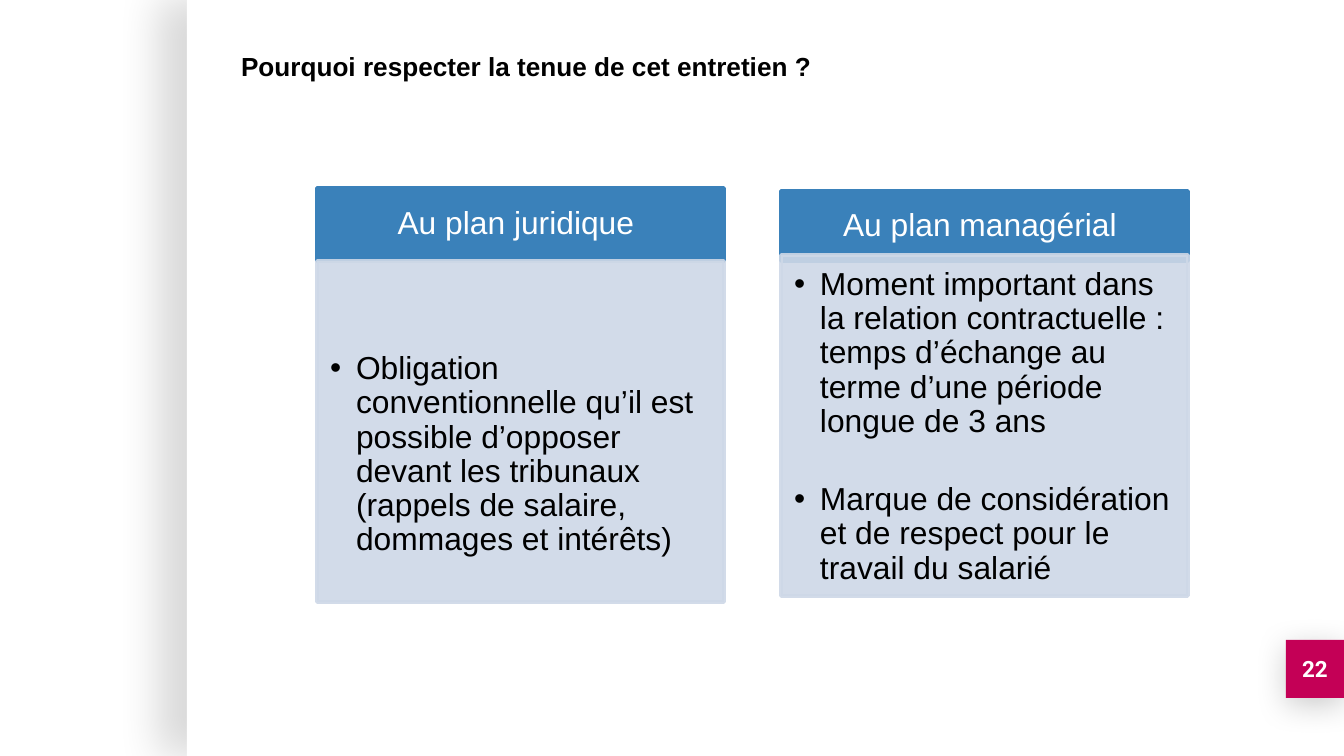
from lxml import etree
from pptx import Presentation
from pptx.dml.color import RGBColor
from pptx.enum.shapes import MSO_SHAPE
from pptx.enum.text import MSO_ANCHOR, MSO_AUTO_SIZE, PP_ALIGN
from pptx.oxml.ns import qn
from pptx.util import Emu, Pt

RECTANGLE = MSO_SHAPE.RECTANGLE
TOP, MIDDLE = MSO_ANCHOR.TOP, MSO_ANCHOR.MIDDLE
LEFT, CENTER = PP_ALIGN.LEFT, PP_ALIGN.CENTER
NO_AUTOFIT = MSO_AUTO_SIZE.NONE

EMU_PER_PX = 914400 / 134.4
COMPARISON_LAYOUT = 4
SLIDE_WIDTH, SLIDE_HEIGHT = 1344, 756
COLUMN_WIDTH, BODY_HEIGHT = 407, 341
BULLET_INDENT = 26
BLUE, PALE_BLUE, PINK = "3A81BA", "CED8E7", "C40056"
WHITE, BLACK = "FFFFFF", "000000"

COLUMNS = [
    {"left": 317, "heading_top": 188, "heading_height": 73, "body_top": 261,
     "inset_top": 91, "heading": "Au plan juridique ",
     "points": ["Obligation conventionnelle qu’il est possible d’opposer devant "
                "les tribunaux (rappels de salaire, dommages et intérêts)"]},
    {"left": 781, "heading_top": 191, "heading_height": 70, "body_top": 255,
     "inset_top": 13, "heading": "Au plan managérial ",
     "points": ["Moment important dans la relation contractuelle : temps "
                "d’échange au terme d’une période longue de 3 ans",
                "Marque de considération et de respect pour le travail du salarié"]},
]


def px(length):
    return Emu(round(length * EMU_PER_PX))


def color(value):
    return RGBColor.from_string(value)


def place(shape, left, top, width, height):
    shape.left, shape.top = px(left), px(top)
    shape.width, shape.height = px(width), px(height)


def paint(shape, fill, opacity=100):
    shape.fill.solid()
    shape.fill.fore_color.rgb = color(fill)
    shape.line.color.rgb = color(fill)
    shape.line.width = Pt(2)
    if opacity < 100:
        for tint in shape._element.spPr.iter(qn("a:srgbClr")):
            etree.SubElement(tint, qn("a:alpha"), val=str(opacity * 1000))


def add_bullet(paragraph):
    properties = paragraph._p.get_or_add_pPr()
    properties.set("marL", str(px(BULLET_INDENT)))
    properties.set("indent", str(-px(BULLET_INDENT)))
    bullet_color = etree.SubElement(properties, qn("a:buClr"))
    etree.SubElement(bullet_color, qn("a:srgbClr"), val=BLACK)
    etree.SubElement(properties, qn("a:buFont"), typeface="Arial")
    etree.SubElement(properties, qn("a:buChar"), char="•")


def write(shape, texts, size=17, font="Arial", ink=BLACK, bold=False, align=LEFT,
          anchor=TOP, insets=(13, 7, 13, 7), spacing=1.0, gap=0, bullets=False):
    frame = shape.text_frame
    frame.word_wrap = True
    frame.auto_size = NO_AUTOFIT
    frame.vertical_anchor = anchor
    (frame.margin_left, frame.margin_top,
     frame.margin_right, frame.margin_bottom) = map(px, insets)
    for index, text in enumerate(texts):
        paragraph = frame.add_paragraph() if index else frame.paragraphs[0]
        if bullets:
            add_bullet(paragraph)
        paragraph.alignment = align
        paragraph.line_spacing = spacing
        paragraph.space_before = Pt(gap if index else 0)
        run = paragraph.add_run()
        run.text = text
        run.font.name = font
        run.font.size = Pt(size)
        run.font.bold = bold
        run.font.color.rgb = color(ink)


def add_shadowed_block(slide, bounds, fill, opacity, blur, distance, direction):
    block = slide.shapes.add_shape(RECTANGLE, 0, 0, 0, 0)
    place(block, *bounds)
    block.fill.solid()
    block.fill.fore_color.rgb = color(fill)
    block.line.fill.background()
    block.shadow.inherit = False
    effects = block._element.spPr.find(qn("a:effectLst"))
    shadow = etree.SubElement(
        effects, qn("a:outerShdw"), blurRad=str(Pt(blur)), dist=str(Pt(distance)),
        dir=str(direction * 60000), algn="ctr", rotWithShape="0")
    tint = etree.SubElement(shadow, qn("a:srgbClr"), val=BLACK)
    etree.SubElement(tint, qn("a:alpha"), val=str(opacity * 1000))
    return block


def fill_column(heading, body, column):
    place(heading, column["left"], column["heading_top"],
          COLUMN_WIDTH, column["heading_height"])
    paint(heading, BLUE)
    write(heading, [column["heading"]], ink=WHITE, align=CENTER, anchor=MIDDLE,
          insets=(17, 11, 17, 11), spacing=0.9)
    place(body, column["left"], column["body_top"], COLUMN_WIDTH, BODY_HEIGHT)
    paint(body, PALE_BLUE, opacity=90)
    write(body, column["points"], insets=(13, column["inset_top"], 17, 20),
          spacing=0.9, gap=23.4, bullets=True)


def main():
    deck = Presentation()
    deck.slide_width, deck.slide_height = px(SLIDE_WIDTH), px(SLIDE_HEIGHT)
    slide = deck.slides.add_slide(deck.slide_layouts[COMPARISON_LAYOUT])
    title, *column_parts = slide.placeholders

    page = add_shadowed_block(slide, (187, 0, 1157, SLIDE_HEIGHT), WHITE,
                              opacity=15, blur=22.5, distance=15, direction=180)
    title._element.addprevious(page._element)
    page_number = add_shadowed_block(slide, (1286, 640, 58, 58), PINK,
                                     opacity=20, blur=16.9, distance=3.8, direction=90)
    write(page_number, ["22"], size=12, font="Roboto", ink=WHITE, bold=True,
          align=CENTER, anchor=MIDDLE, insets=(13, 13, 13, 13))

    place(title, 228, 43, 814, 46)
    write(title, ["Pourquoi respecter la tenue de cet entretien ?"], size=14, bold=True)
    for heading, body, column in zip(column_parts[::2], column_parts[1::2], COLUMNS):
        fill_column(heading, body, column)
    deck.save("out.pptx")


if __name__ == "__main__":
    main()
